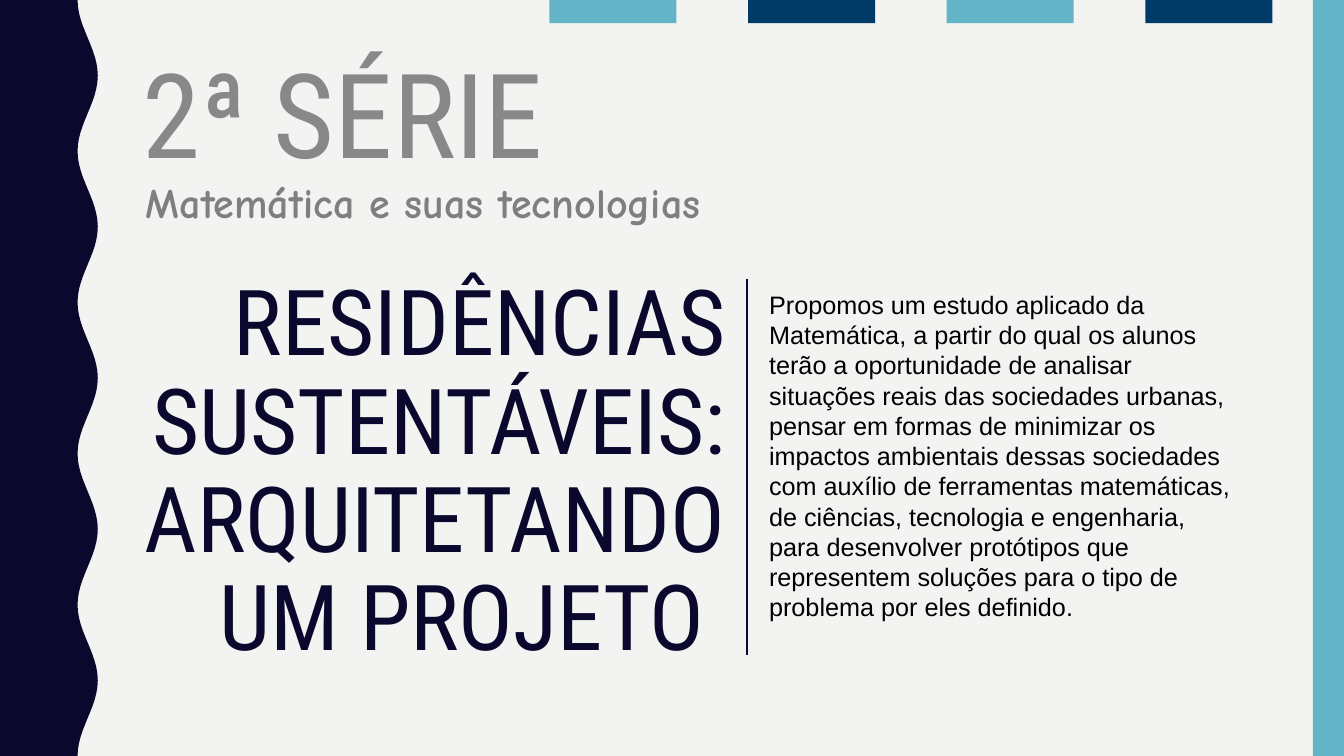
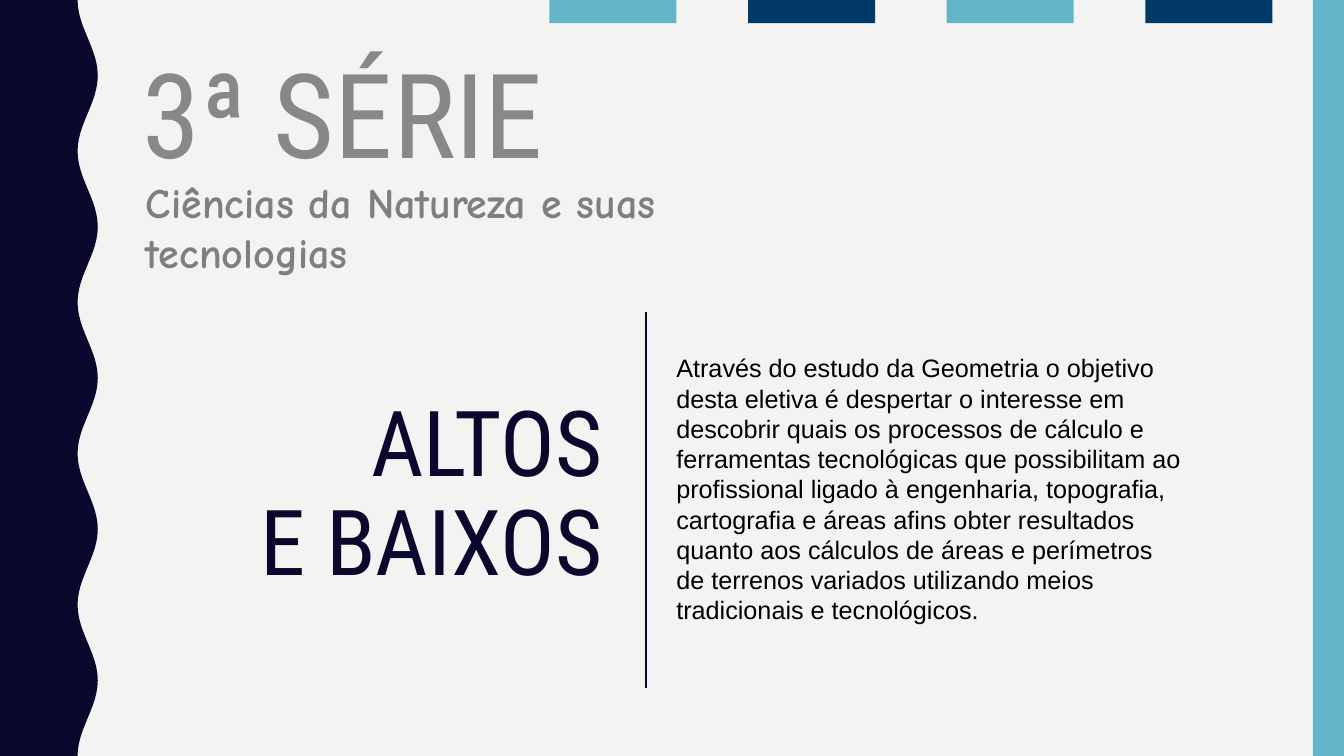
import dataclasses
import math

import lxml.etree
import pptx
import pptx.dml.color
import pptx.enum.shapes
import pptx.enum.text
import pptx.oxml.ns
import pptx.util

Inches = pptx.util.Inches
ALIGN = pptx.enum.text.PP_ALIGN
SLIDE_WIDTH = 13.33
SLIDE_HEIGHT = 7.5


@dataclasses.dataclass(frozen=True)
class TextStyle:
    font: str
    size: int
    color: str
    bold: bool = False
    align: ALIGN = ALIGN.LEFT
    line_spacing: float = 1.0


@dataclasses.dataclass(frozen=True)
class Theme:
    background: str = "F3F3F2"
    navy: str = "0B082E"
    blue: str = "003B68"
    aqua: str = "62B4C6"
    title: TextStyle = TextStyle("Roboto Condensed", 84, "888888", line_spacing=0.9)
    area: TextStyle = TextStyle("Comic Neue", 30, "7F7F7F", bold=True)
    project: TextStyle = TextStyle("Roboto Condensed", 65, "0B082E", align=ALIGN.RIGHT, line_spacing=0.9)
    summary: TextStyle = TextStyle("Arial", 18, "000000")


def rgb(color):
    return pptx.dml.color.RGBColor.from_string(color)


class Deck:
    def __init__(self, theme):
        self.theme = theme
        self.slide = None
        self.presentation = pptx.Presentation()
        self.presentation.slide_width = Inches(SLIDE_WIDTH)
        self.presentation.slide_height = Inches(SLIDE_HEIGHT)
        fill = self.presentation.slide_master.background.fill
        fill.solid()
        fill.fore_color.rgb = rgb(theme.background)

    def new_slide(self):
        layout = self.presentation.slide_layouts.get_by_name("Title Only")
        self.slide = self.presentation.slides.add_slide(layout)
        self.wave()
        self.rectangle(13.02, 0, 0.31, SLIDE_HEIGHT, self.theme.aqua)
        for index in range(4):
            color = self.theme.blue if index % 2 else self.theme.aqua
            self.rectangle(5.45 + 1.97 * index, 0, 1.26, 0.23, color)

    def paint(self, shape, color):
        shape.shadow.inherit = False
        shape.fill.solid()
        shape.fill.fore_color.rgb = rgb(color)
        shape.line.fill.background()

    def rectangle(self, left, top, width, height, color):
        shape = self.slide.shapes.add_shape(
            pptx.enum.shapes.MSO_SHAPE.RECTANGLE,
            Inches(left), Inches(top), Inches(width), Inches(height))
        self.paint(shape, color)

    def wave(self):
        middle, amplitude, period, steps = 0.87, 0.1, 1.5, 120
        heights = [SLIDE_HEIGHT * step / steps for step in range(steps + 1)]
        edge = [(Inches(middle - amplitude * math.cos(2 * math.pi * y / period)), Inches(y))
                for y in heights]
        builder = self.slide.shapes.build_freeform(0, 0)
        builder.add_line_segments(edge + [(0, Inches(SLIDE_HEIGHT))], close=True)
        self.paint(builder.convert_to_shape(), self.theme.navy)

    def fill_text(self, shape, paragraphs, style, margin):
        frame = shape.text_frame
        frame.word_wrap = True
        frame.auto_size = pptx.enum.text.MSO_AUTO_SIZE.NONE
        frame.vertical_anchor = pptx.enum.text.MSO_ANCHOR.TOP
        frame.margin_left = frame.margin_right = Inches(0.1)
        frame.margin_top = frame.margin_bottom = Inches(margin)
        frame.text = "\n".join(paragraphs)
        for paragraph in frame.paragraphs:
            paragraph.alignment = style.align
            paragraph.line_spacing = style.line_spacing
            paragraph.font.name = style.font
            paragraph.font.size = pptx.util.Pt(style.size)
            paragraph.font.bold = style.bold
            paragraph.font.color.rgb = rgb(style.color)

    def title(self, text):
        shape = self.slide.shapes.title
        shape.left, shape.top = Inches(1.31), Inches(0.51)
        shape.width, shape.height = Inches(9.76), Inches(1.33)
        self.fill_text(shape, [text], self.theme.title, 0.05)

    def text(self, left, top, width, height, paragraphs, style):
        shape = self.slide.shapes.add_textbox(
            Inches(left), Inches(top), Inches(width), Inches(height))
        self.fill_text(shape, paragraphs, style, 0.1)

    def divider(self, left, top):
        connector = self.slide.shapes.add_connector(
            pptx.enum.shapes.MSO_CONNECTOR.STRAIGHT,
            Inches(left), Inches(top), Inches(left), Inches(top + 3.73))
        connector.line.color.rgb = rgb(self.theme.navy)
        connector.line.width = pptx.util.Pt(1.5)
        properties = connector._element.spPr
        lxml.etree.SubElement(properties, pptx.oxml.ns.qn("a:effectLst"))

    def elective(self, series, area, project, project_box, divider, summary, summary_box):
        self.new_slide()
        self.title(series)
        self.text(1.35, 1.65, 6.8, 1.2, [area], self.theme.area)
        self.text(*project_box, project, self.theme.project)
        self.divider(*divider)
        self.text(*summary_box, [summary], self.theme.summary)


def main():
    deck = Deck(Theme())
    deck.elective(
        series="2ª SÉRIE",
        area="Matemática e suas tecnologias",
        project=["RESIDÊNCIAS SUSTENTÁVEIS: ARQUITETANDO", "UM PROJETO "],
        project_box=(1, 2.65, 6.3, 4.14),
        divider=(7.41, 2.77),
        summary="Propomos um estudo aplicado da Matemática, a partir do qual os alunos terão "
                "a oportunidade de analisar situações reais das sociedades urbanas, pensar em "
                "formas de minimizar os impactos ambientais dessas sociedades com auxílio de "
                "ferramentas matemáticas, de ciências, tecnologia e engenharia, para "
                "desenvolver protótipos que representem soluções para o tipo de problema por "
                "eles definido.",
        summary_box=(7.53, 2.77, 4.87, 3.54))
    deck.elective(
        series="3ª SÉRIE",
        area="Ciências da Natureza e suas tecnologias",
        project=["ALTOS", "E BAIXOS"],
        project_box=(1, 3.85, 5.08, 2.17),
        divider=(6.41, 3.1),
        summary="Através do estudo da Geometria o objetivo desta eletiva é despertar o "
                "interesse em descobrir quais os processos de cálculo e ferramentas "
                "tecnológicas que possibilitam ao profissional ligado à engenharia, "
                "topografia, cartografia e áreas afins obter resultados quanto aos cálculos "
                "de áreas e perímetros de terrenos variados utilizando meios tradicionais e "
                "tecnológicos.",
        summary_box=(6.61, 3.4, 5.26, 2.93))
    deck.presentation.save("out.pptx")


if __name__ == "__main__":
    main()
